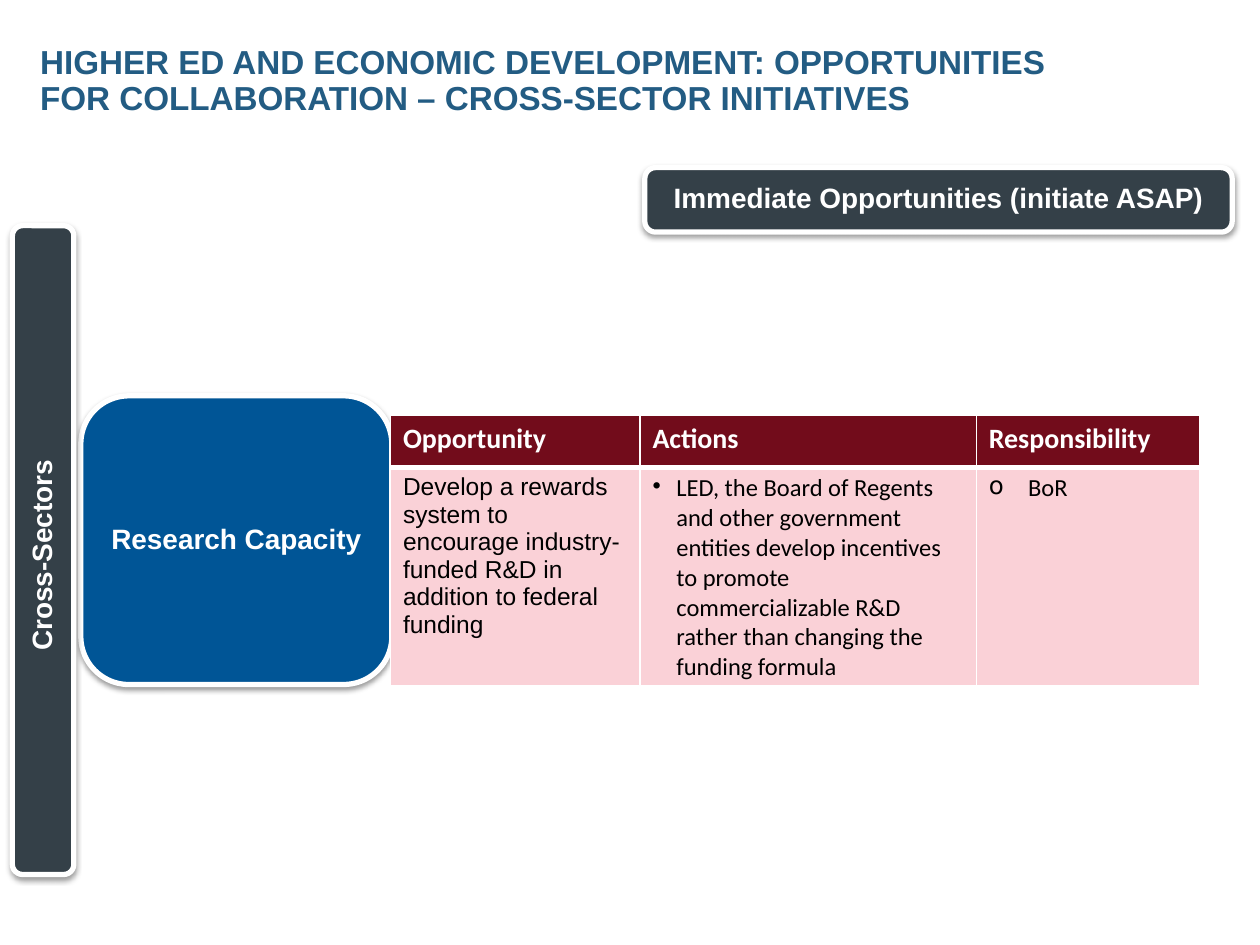
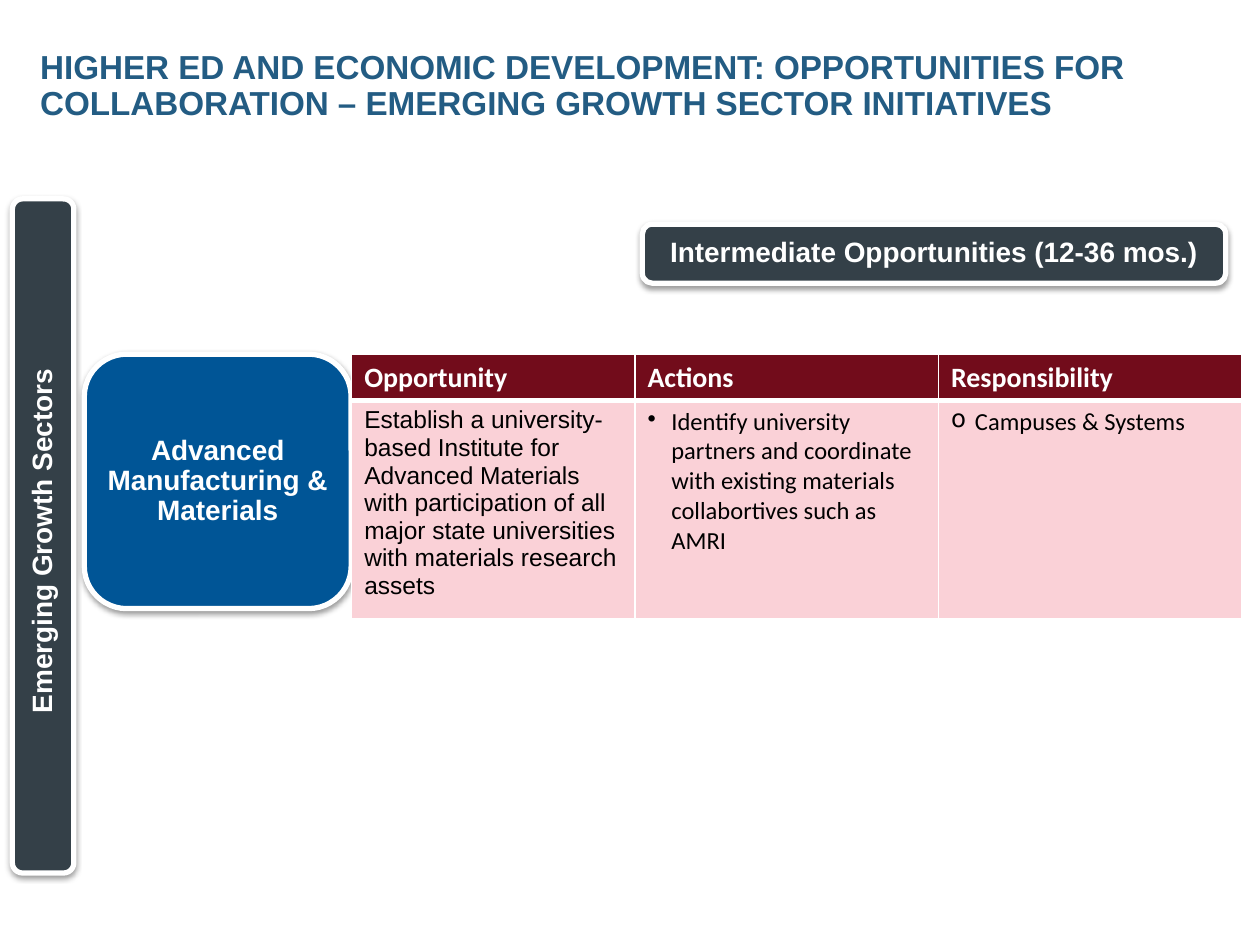
from dataclasses import dataclass

from pptx import Presentation
from pptx.dml.color import RGBColor
from pptx.enum.shapes import MSO_SHAPE
from pptx.enum.text import MSO_ANCHOR, PP_ALIGN
from pptx.oxml import parse_xml
from pptx.oxml.ns import nsdecls, qn
from pptx.util import Cm, Pt


@dataclass(frozen=True)
class Theme:
    white: str = "FFFFFF"
    black: str = "000000"
    title: str = "235C83"
    slate: str = "344048"
    blue: str = "005596"
    head: str = "720C1B"
    body: str = "FAD1D7"
    sans: str = "Arial"
    grid: str = "Calibri"
    big: int = 19
    mid: int = 16
    small: int = 14


theme = Theme()
TITLE = dict(name=theme.sans, size=Pt(theme.big), bold=True, color=theme.title)
LABEL = dict(name=theme.sans, size=Pt(theme.mid), bold=True, color=theme.white)
HEAD = dict(LABEL, name=theme.grid)
LEAD = dict(name=theme.sans, size=Pt(theme.small), bold=False, color=theme.black)
ITEM = dict(LEAD, name=theme.grid)
PAD = dict(margin_left=Cm(0.18), margin_right=Cm(0.18),
           margin_top=Cm(0.09), margin_bottom=Cm(0.09))
FLUSH = dict.fromkeys(PAD, 0)
HEADS = ("Opportunity", "Actions", "Responsibility")
SHADOW = (f'<a:outerShdw {nsdecls("a")} blurRad="40000" dist="20000" dir="5400000" '
          f'rotWithShape="0"><a:srgbClr val="{theme.black}"><a:alpha val="38000"/>'
          '</a:srgbClr></a:outerShdw>')

# Places are left, top, width, height in centimetres.
PAGES = [
    dict(
        title=("HIGHER ED AND ECONOMIC DEVELOPMENT: OPPORTUNITIES FOR "
               "COLLABORATION – CROSS-SECTOR INITIATIVES", (0.81, 0.91, 21.64, 1.47)),
        banner=("Immediate Opportunities (initiate ASAP)", (13, 3.38, 11.84, 1.3)),
        topic=("Research Capacity", (1.63, 7.98, 6.27, 5.82)),
        sector=("Cross-Sectors", (0.25, 4.55, 1.24, 13.08)),
        spot=(7.87, 8.38), cols=(5.03, 6.78, 4.5), rows=(1.04, 4.4),
        cells=("Develop a rewards system to encourage industry-funded R&D in "
               "addition to federal funding",
               "LED, the Board of Regents and other government entities develop "
               "incentives to promote commercializable R&D rather than changing "
               "the funding formula",
               "BoR"),
        indents=(0, 0.48, 0.79),
    ),
    dict(
        title=("HIGHER ED AND ECONOMIC DEVELOPMENT: OPPORTUNITIES FOR "
               "COLLABORATION – EMERGING GROWTH SECTOR INITIATIVES",
               (0.81, 0.66, 22.25, 2.18)),
        banner=("Intermediate Opportunities (12-36 mos.)", (12.95, 4.52, 11.76, 1.19)),
        topic=("Advanced Manufacturing & Materials", (1.7, 7.14, 5.38, 5.13)),
        sector=("Emerging Growth Sectors", (0.25, 4.01, 1.24, 13.59)),
        spot=(7.09, 7.14), cols=(5.71, 6.12, 6.12), rows=(0.93, 4.14),
        cells=("Establish a university-based Institute for Advanced Materials with "
               "participation of all major state universities with materials "
               "research assets",
               "Identify university partners and coordinate with existing materials "
               "collabortives such as AMRI",
               "Campuses & Systems"),
        indents=(0, 0.48, 0.48),
    ),
]


def write(frame, text, style):
    """Put one styled run in the frame and return its paragraph."""
    para = frame.paragraphs[0]
    run = para.add_run()
    run.text = text
    for key, value in style.items():
        if key == "color":
            run.font.color.rgb = RGBColor.from_string(value)
        else:
            setattr(run.font, key, value)
    return para


def panel(slide, label, fill):
    """Add a white-edged rounded panel with a soft shadow and a label."""
    text, place = label
    shape = slide.shapes.add_shape(MSO_SHAPE.ROUNDED_RECTANGLE, *map(Cm, place))
    shape.fill.solid()
    shape.fill.fore_color.rgb = RGBColor.from_string(fill)
    shape.line.color.rgb = RGBColor.from_string(theme.white)
    shape.line.width = Pt(3)
    shape.shadow.inherit = False
    shape.element.spPr.find(qn("a:effectLst")).append(parse_xml(SHADOW))
    frame = shape.text_frame
    for key, value in dict(PAD, word_wrap=True, vertical_anchor=MSO_ANCHOR.MIDDLE).items():
        setattr(frame, key, value)
    para = write(frame, text, LABEL)
    para.alignment = PP_ALIGN.CENTER
    para.line_spacing = 0.9
    return shape


deck = Presentation()
deck.slide_width, deck.slide_height = Cm(25.4), Cm(19.05)

for page in PAGES:
    slide = deck.slides.add_slide(deck.slide_layouts[6])

    text, place = page["title"]
    frame = slide.shapes.add_textbox(*map(Cm, place)).text_frame
    for key, value in dict(FLUSH, word_wrap=True, vertical_anchor=MSO_ANCHOR.MIDDLE).items():
        setattr(frame, key, value)
    write(frame, text, TITLE).line_spacing = 0.9

    panel(slide, page["banner"], theme.slate)
    panel(slide, page["topic"], theme.blue)
    sector = panel(slide, page["sector"], theme.slate)
    sector.text_frame.margin_top = Cm(0.3)
    sector.element.txBody.bodyPr.set("vert", "vert270")

    cols, rows = page["cols"], page["rows"]
    size = (sum(cols), sum(rows))
    table = slide.shapes.add_table(2, 3, *map(Cm, page["spot"] + size)).table
    for col, width in zip(table.columns, cols):
        col.width = Cm(width)
    for row, height in zip(table.rows, rows):
        row.height = Cm(height)

    for r, texts in enumerate((HEADS, page["cells"])):
        for c, text in enumerate(texts):
            cell = table.cell(r, c)
            props = cell._tc.get_or_add_tcPr()
            for side in "LRTB":
                # A thick rule parts the header from the body.
                width = Pt(3) if (r, side) == (0, "B") else Pt(1)
                props.append(parse_xml(
                    f'<a:ln{side} {nsdecls("a")} w="{width}"><a:solidFill>'
                    f'<a:srgbClr val="{theme.white}"/></a:solidFill></a:ln{side}>'))
            cell.fill.solid()
            cell.fill.fore_color.rgb = RGBColor.from_string((theme.head, theme.body)[r])
            style = HEAD if r == 0 else LEAD if c == 0 else ITEM
            para = write(cell.text_frame, text, style)
            if r and c:
                indent = Cm(page["indents"][c])
                ppr = para._p.get_or_add_pPr()
                ppr.set("marL", str(indent))
                ppr.set("indent", str(-indent))
                mark = "•o"[c - 1]
                ppr.append(parse_xml(f'<a:buChar {nsdecls("a")} char="{mark}"/>'))
            elif r:
                para.space_after = Pt(6)

deck.save("out.pptx")
